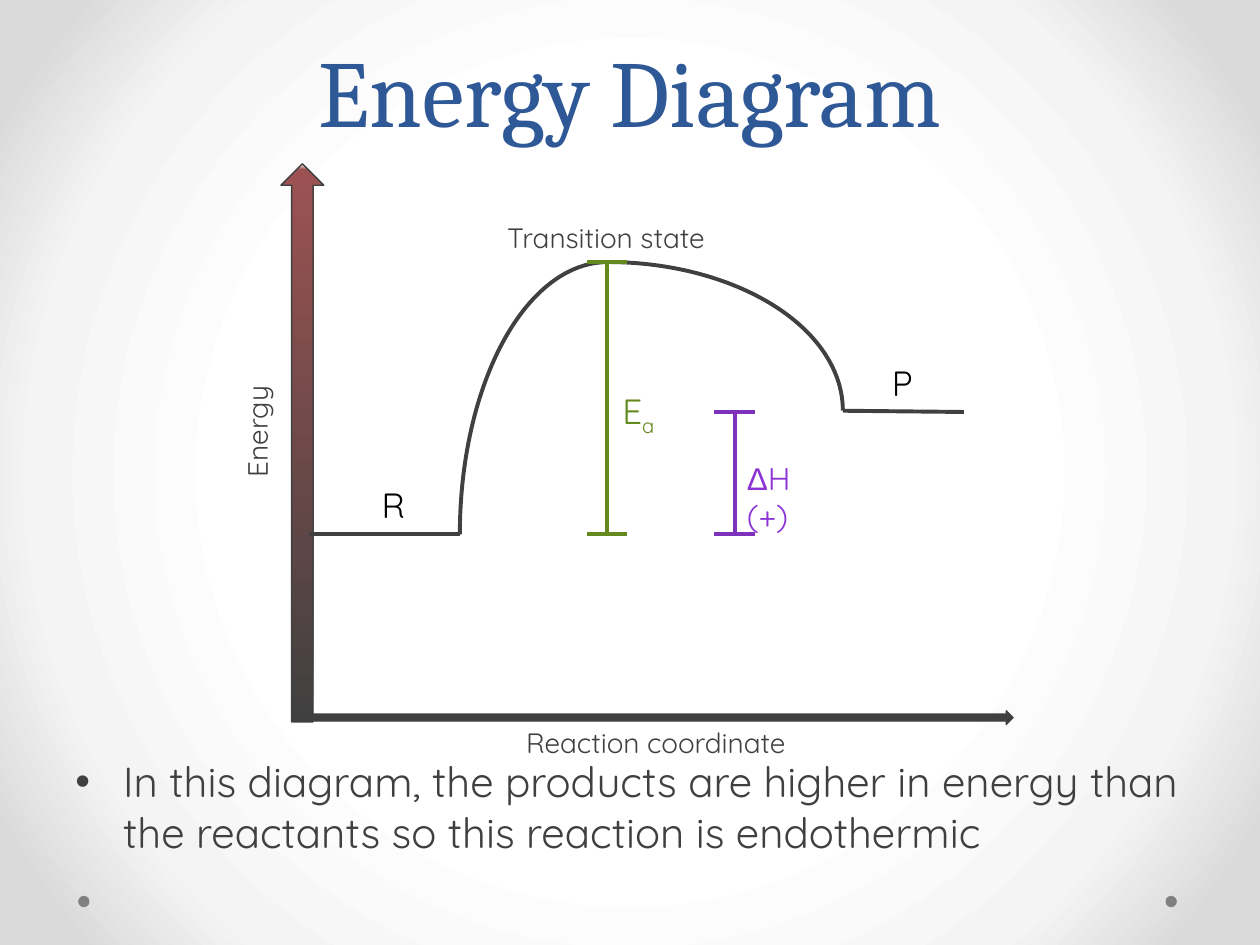
"""Build a slide with the energy diagram of an endothermic reaction."""
from lxml import etree
from pptx import Presentation
from pptx.dml.color import RGBColor
from pptx.enum.shapes import MSO_CONNECTOR, MSO_SHAPE
from pptx.enum.text import MSO_ANCHOR, PP_ALIGN
from pptx.oxml.ns import qn
from pptx.util import Inches, Pt

STRAIGHT = MSO_CONNECTOR.STRAIGHT
ARC, ARROW, OVAL = MSO_SHAPE.ARC, MSO_SHAPE.UP_ARROW, MSO_SHAPE.OVAL
TOP, BOTTOM = MSO_ANCHOR.TOP, MSO_ANCHOR.BOTTOM
LEFT, CENTER = PP_ALIGN.LEFT, PP_ALIGN.CENTER

THEME = {
    "head": "Cambria", "body": "Quicksand", "symbol": "Arial",
    "blue": "2F5897", "dark": "404040", "black": "000000", "dot": "808080",
    "green": "63891F", "purple": "7E31BA", "violet": "8D35D4",
    "title": 54, "text": 24, "label": 20, "delta": 18, "axis": 16,
    "curve": 2.25, "outline": 0.75,
    "backdrop": [(50, "FFFFFF"), (76, "F4F4F4"), (92, "DADADA")],
    "energy": [(0, "404040"), (99, "9C5252"), (100, "FFFFFF")],
}

W, H = 10, 7.5
MARGIN = W / 20
REACTANT, PRODUCT, PEAK = 4.24, 3.27, 2.08
AXIS_X, RISE_X, PEAK_X, FALL_X, END_X = 2.45, 3.65, 4.82, 6.69, 7.65
DELTA_X, CAP = 5.83, 0.32

TITLE = ((MARGIN, 0, W - 2 * MARGIN, 1.21), [("Energy Diagram", "head")], "title", "blue", CENTER)
NOTE = ((MARGIN, 5.95, W - 2 * MARGIN, 1.27),
        [("In this diagram, the products are higher in energy than "
          "the reactants so this reaction is endothermic", "body")], "text", "dark", LEFT)
LABELS = [
    ((2.93, 3.79, 0.38, 0.44), [("R", "body")], "label", "black", LEFT),
    ((6.98, 2.82, 0.38, 0.44), [("P", "body")], "label", "black", LEFT),
    ((3.92, 5.71, 2.57, 0.37), [("Reaction coordinate", "body")], "axis", "dark", CENTER),
    ((3.91, 1.7, 1.8, 0.37), [("Transition state", "body")], "axis", "dark", CENTER),
    ((DELTA_X, 3.59, 0.7, 0.73), [("Δ", "symbol"), ("H (+)", "body")], "delta", "violet", LEFT),
]
ENERGY = ((1.23, 3.24, 1.62, 0.37), [("Energy", "body")], "axis", "dark", CENTER)
BARRIER = ((4.84, 3.04, 0.61, 0.44), [("E", "body"), ("a", "body")], "label", "green", LEFT)
PLATEAUS = [((RISE_X, REACTANT), (AXIS_X, REACTANT)),
            ((FALL_X, PRODUCT - 0.01), (END_X, PRODUCT))]
SPANS = [(PEAK_X, PEAK, "green"), (DELTA_X, PRODUCT, "purple")]


def rgb(name):
    return RGBColor.from_string(THEME[name])


def set_gradient(parent, stops, angle=None):
    grad = parent.find(".//" + qn("a:gradFill"))
    for child in list(grad):
        grad.remove(child)
    stop_list = etree.SubElement(grad, qn("a:gsLst"))
    for pos, color in stops:
        gs = etree.SubElement(stop_list, qn("a:gs"), pos=str(pos * 1000))
        etree.SubElement(gs, qn("a:srgbClr"), val=color)
    if angle is None:
        way = etree.SubElement(grad, qn("a:path"), path="circle")
        etree.SubElement(way, qn("a:fillToRect"), l="50000", t="50000", r="50000", b="50000")
    else:
        etree.SubElement(grad, qn("a:lin"), ang=str(angle * 60000), scaled="0")


def add_text(slide, box, runs, size, color, align, anchor=TOP):
    sp = slide.shapes.add_textbox(*map(Inches, box))
    tf = sp.text_frame
    tf.word_wrap = True
    tf.vertical_anchor = anchor
    p = tf.paragraphs[0]
    p.alignment = align
    for text, font in runs:
        r = p.add_run()
        r.text = text
        r.font.name = THEME[font]
        r.font.size = Pt(THEME[size])
        r.font.color.rgb = rgb(color)
    return sp


def add_shape(slide, kind, box, fill=None, line=None, width="outline", rotation=0):
    sp = slide.shapes.add_shape(kind, *map(Inches, box))
    sp.shadow.inherit = False
    sp.rotation = rotation
    if fill:
        sp.fill.solid()
        sp.fill.fore_color.rgb = rgb(fill)
    else:
        sp.fill.background()
    if line:
        sp.line.color.rgb = rgb(line)
        sp.line.width = Pt(THEME[width])
    else:
        sp.line.fill.background()
    return sp


def add_line(slide, start, end, color):
    sp = slide.shapes.add_connector(STRAIGHT, *map(Inches, start + end))
    sp.line.color.rgb = rgb(color)
    sp.line.width = Pt(THEME["curve"])
    etree.SubElement(sp.element.spPr, qn("a:effectLst"))


def add_bullet(p, indent):
    pPr = p._p.get_or_add_pPr()
    pPr.set("marL", str(Inches(indent)))
    pPr.set("indent", str(-Inches(indent)))
    etree.SubElement(pPr, qn("a:buFont"), typeface=THEME["symbol"])
    etree.SubElement(pPr, qn("a:buChar"), char="•")


def draw_axes(slide):
    sp = add_shape(slide, ARROW, (2.23, 1.3, 0.34, 4.43), line="dark")
    sp.fill.gradient()
    set_gradient(sp.element.spPr, THEME["energy"], 270)
    add_shape(slide, ARROW, (5.19, 2.9, 0.11, 5.59), "dark", "dark", rotation=90)


def draw_curve(slide):
    rise_w, rise_h = 2 * (REACTANT - PEAK), 2 * (PEAK_X - RISE_X)
    rise = (PEAK_X - rise_w / 2, REACTANT - rise_h / 2, rise_w, rise_h)
    fall_w, fall_h = 2 * (FALL_X - PEAK_X), 2 * (PRODUCT - PEAK) - 0.02
    fall = (PEAK_X - fall_w / 2, PEAK, fall_w, fall_h)
    for box, rotation in ((rise, 270), (fall, 0)):
        add_shape(slide, ARC, box, line="dark", width="curve", rotation=rotation)
    for start, end in PLATEAUS:
        add_line(slide, start, end, "dark")


def draw_span(slide, x, top, color):
    add_line(slide, (x, top), (x, REACTANT), color)
    for y in (top, REACTANT):
        add_line(slide, (x - CAP / 2, y), (x + CAP / 2, y), color)


def main():
    prs = Presentation()
    prs.slide_width, prs.slide_height = Inches(W), Inches(H)
    slide = prs.slides.add_slide(prs.slide_layouts[6])
    slide.background.fill.gradient()
    set_gradient(slide.element, THEME["backdrop"])
    for x in (9.25, 0.62):
        add_shape(slide, OVAL, (x, 7.11, 0.09, 0.09), "dot")

    note = add_text(slide, *NOTE)
    add_bullet(note.text_frame.paragraphs[0], 0.38)
    title = add_text(slide, *TITLE, anchor=BOTTOM)
    title.text_frame.paragraphs[0].line_spacing = Pt(58)

    draw_axes(slide)
    draw_curve(slide)
    for span in SPANS:
        draw_span(slide, *span)
    for label in LABELS:
        add_text(slide, *label)
    add_text(slide, *ENERGY).rotation = 270
    barrier = add_text(slide, *BARRIER)
    barrier.text_frame.paragraphs[0].runs[1].font._rPr.set("baseline", "-25000")
    prs.save("out.pptx")


if __name__ == "__main__":
    main()
